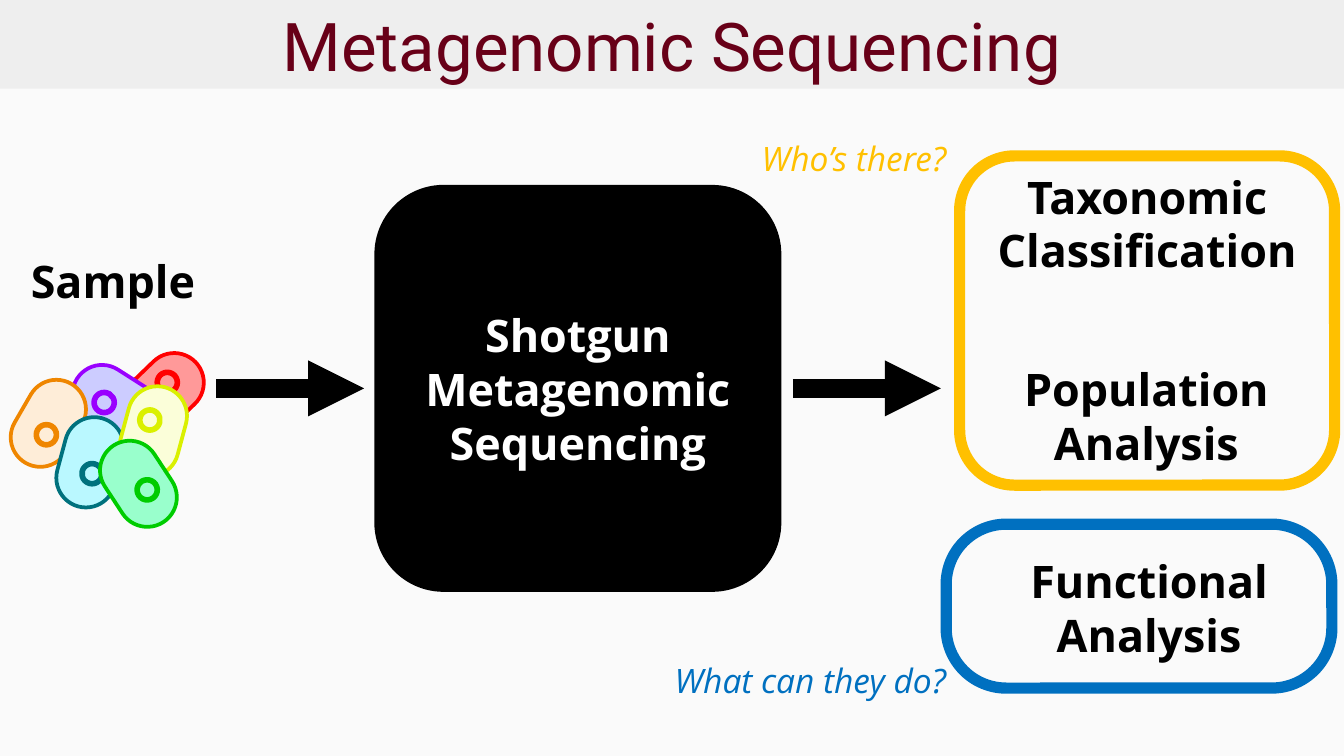
from dataclasses import dataclass
from typing import Optional

from lxml import etree
from pptx import Presentation
from pptx.dml.color import RGBColor
from pptx.enum.shapes import MSO_CONNECTOR, MSO_SHAPE
from pptx.enum.text import MSO_ANCHOR, PP_ALIGN
from pptx.oxml.ns import qn
from pptx.util import Emu, Pt

RECT = MSO_SHAPE.RECTANGLE
ROUNDED = MSO_SHAPE.ROUNDED_RECTANGLE
OVAL = MSO_SHAPE.OVAL
STRAIGHT = MSO_CONNECTOR.STRAIGHT
CENTER, RIGHT = PP_ALIGN.CENTER, PP_ALIGN.RIGHT
TOP, MIDDLE = MSO_ANCHOR.TOP, MSO_ANCHOR.MIDDLE

PX = 9144  # 100 px to the inch
SLIDE_WIDTH = 1000 * PX
SLIDE_HEIGHT = SLIDE_WIDTH * 9 // 16


@dataclass(frozen=True)
class Theme:
    background: str = "FAFAFA"
    banner: str = "EEEEEE"
    title: str = "680018"
    black: str = "000000"
    white: str = "FFFFFF"
    who: str = "FFC000"
    what: str = "0070C0"
    title_font: str = "Roboto"
    body_font: str = "Open Sans"
    title_size: int = 36
    label_size: int = 24
    question_size: int = 18
    thin: int = 2
    nucleus: int = 3
    frame: int = 6
    arrow: int = 10


THEME = Theme()


@dataclass(frozen=True)
class Box:
    left: int
    top: int
    width: int
    height: int

    def emu(self) -> list[Emu]:
        return [Emu(n * PX) for n in (self.left, self.top, self.width, self.height)]


@dataclass(frozen=True)
class TextStyle:
    size: int
    color: str
    font: str = THEME.body_font
    bold: bool = False
    italic: bool = False
    align: PP_ALIGN = CENTER
    anchor: MSO_ANCHOR = TOP


@dataclass(frozen=True)
class Microbe:
    left: int
    top: int
    rotation: float
    nucleus_left: int
    nucleus_top: int
    fill: str
    line: str


@dataclass(frozen=True)
class Label:
    box: Box
    text: str
    style: TextStyle


@dataclass(frozen=True)
class Frame:
    box: Box
    corner: float
    color: str


HEADING = TextStyle(THEME.title_size, THEME.title, THEME.title_font, anchor=MIDDLE)
STEP = TextStyle(THEME.label_size, THEME.black, bold=True)
PROCESS = TextStyle(THEME.label_size, THEME.white, bold=True, anchor=MIDDLE)
WHO = TextStyle(THEME.question_size, THEME.who, italic=True, align=RIGHT)
WHAT = TextStyle(THEME.question_size, THEME.what, italic=True, align=RIGHT)

MICROBES = [
    Microbe(99, 259, 226, 117, 277, "FF9999", "FF0000"),
    Microbe(64, 266, 122.5, 70, 292, "CCCCFF", "9900FF"),
    Microbe(14, 281, 30, 27, 316, "FEEDD8", "EF8600"),
    Microbe(45, 310, 15, 61, 345, "BAF8FF", "00717D"),
    Microbe(92, 287, 195, 104, 305, "FBFED9", "DAF000"),
    Microbe(81, 326, 326.8, 102, 357, "99FFCC", "00CC00"),
]
MICROBE_WIDTH, MICROBE_HEIGHT, NUCLEUS = 44, 68, 15

ARROW_Y, ARROW_LENGTH = 289, 110
ARROW_STARTS = [161, 590]

FRAMES = [
    Frame(Box(714, 116, 279, 245), 0.167, THEME.who),
    Frame(Box(704, 390, 287, 122), 0.367, THEME.what),
]

LABELS = [
    Label(Box(12, 184, 144, 50), "Sample", STEP),
    Label(Box(731, 121, 245, 91), "Taxonomic\nClassification", STEP),
    Label(Box(751, 264, 204, 91), "Population\nAnalysis", STEP),
    Label(Box(753, 407, 204, 91), "Functional\nAnalysis", STEP),
    Label(Box(545, 98, 169, 40), "Who’s there?", WHO),
    Label(Box(483, 486, 231, 40), "What can they do?", WHAT),
]


def rgb(color: str) -> RGBColor:
    return RGBColor.from_string(color)


def write(shape, text: str, style: TextStyle) -> None:
    frame = shape.text_frame
    frame.word_wrap = True
    frame.vertical_anchor = style.anchor
    frame.text = text
    for paragraph in frame.paragraphs:
        paragraph.alignment = style.align
        for run in paragraph.runs:
            font = run.font
            font.name, font.size = style.font, Pt(style.size)
            font.bold, font.italic = style.bold, style.italic
            font.color.rgb = rgb(style.color)


def add_outline(slide, kind: MSO_SHAPE, box: Box, fill: Optional[str] = None,
                line: Optional[str] = None, weight: int = THEME.thin,
                corner: Optional[float] = None, rotation: float = 0):
    shape = slide.shapes.add_shape(kind, *box.emu())
    shape.shadow.inherit = False
    shape.rotation = rotation
    if corner is not None:
        shape.adjustments[0] = corner
    if fill:
        shape.fill.solid()
        shape.fill.fore_color.rgb = rgb(fill)
    else:
        shape.fill.background()
    if line:
        shape.line.color.rgb = rgb(line)
        shape.line.width = Pt(weight)
    else:
        shape.line.fill.background()
    return shape


def add_microbe(slide, microbe: Microbe) -> None:
    body = Box(microbe.left, microbe.top, MICROBE_WIDTH, MICROBE_HEIGHT)
    nucleus = Box(microbe.nucleus_left, microbe.nucleus_top, NUCLEUS, NUCLEUS)
    add_outline(slide, ROUNDED, body, microbe.fill, microbe.line,
                corner=0.5, rotation=microbe.rotation)
    add_outline(slide, OVAL, nucleus, line=microbe.line,
                weight=THEME.nucleus, rotation=microbe.rotation)


def add_arrow(slide, start: int) -> None:
    y = Emu(ARROW_Y * PX)
    arrow = slide.shapes.add_connector(
        STRAIGHT, Emu(start * PX), y, Emu((start + ARROW_LENGTH) * PX), y)
    arrow.line.color.rgb = rgb(THEME.black)
    arrow.line.width = Pt(THEME.arrow)
    properties = arrow._element.spPr
    etree.SubElement(properties.find(qn("a:ln")), qn("a:tailEnd"), type="triangle")
    etree.SubElement(properties, qn("a:effectLst"))


def main() -> None:
    deck = Presentation()
    deck.slide_width, deck.slide_height = Emu(SLIDE_WIDTH), Emu(SLIDE_HEIGHT)
    slide = deck.slides.add_slide(deck.slide_layouts[6])
    slide.background.fill.solid()
    slide.background.fill.fore_color.rgb = rgb(THEME.background)

    # Title banner
    banner = add_outline(slide, RECT, Box(0, 0, 1000, 66), THEME.banner)
    write(banner, "Metagenomic Sequencing", HEADING)

    # Sample of mixed microbes
    for microbe in MICROBES:
        add_microbe(slide, microbe)

    # Sequencing step with arrows in and out
    sequencing = add_outline(slide, ROUNDED, Box(280, 139, 300, 300),
                             THEME.black, THEME.black, corner=0.167)
    write(sequencing, "Shotgun Metagenomic\nSequencing", PROCESS)
    for start in ARROW_STARTS:
        add_arrow(slide, start)

    # Analyses and the questions they answer
    for frame in FRAMES:
        add_outline(slide, ROUNDED, frame.box, line=frame.color,
                    weight=THEME.frame, corner=frame.corner)
    for label in LABELS:
        write(slide.shapes.add_textbox(*label.box.emu()), label.text, label.style)

    deck.save("out.pptx")


if __name__ == "__main__":
    main()
